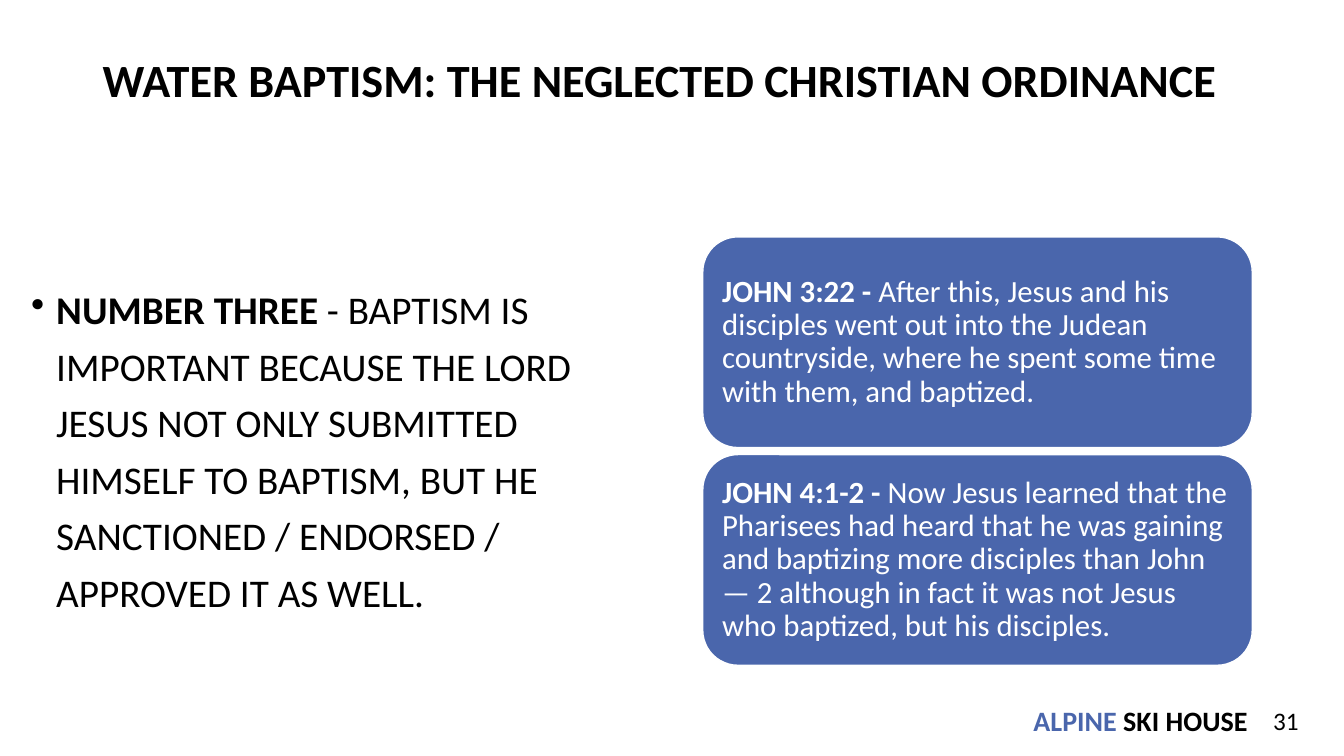
from lxml import etree
from pptx import Presentation
from pptx.dml.color import RGBColor
from pptx.enum.shapes import MSO_SHAPE
from pptx.enum.text import MSO_ANCHOR, PP_ALIGN
from pptx.oxml.ns import qn
from pptx.util import Inches, Pt

ROUNDED = MSO_SHAPE.ROUNDED_RECTANGLE
TOP, MIDDLE = MSO_ANCHOR.TOP, MSO_ANCHOR.MIDDLE
LEFT, RIGHT = PP_ALIGN.LEFT, PP_ALIGN.RIGHT

FONT = "Calibri"
BLUE = RGBColor(0x4A, 0x66, 0xAC)
BLACK = RGBColor(0, 0, 0)
WHITE = RGBColor(255, 255, 255)

TITLE = "WATER BAPTISM: THE NEGLECTED CHRISTIAN ORDINANCE"
POINT = (
    "NUMBER THREE ",
    "- BAPTISM IS IMPORTANT BECAUSE THE LORD JESUS NOT ONLY SUBMITTED HIMSELF "
    "TO BAPTISM, BUT HE SANCTIONED / ENDORSED / APPROVED IT AS WELL.",
)
VERSES = [
    ("JOHN 3:22 - ",
     "After this, Jesus and his disciples went out into the Judean countryside, "
     "where he spent some time with them, and baptized."),
    ("JOHN 4:1-2 - ",
     "Now Jesus learned that the Pharisees had heard that he was gaining and "
     "baptizing more disciples than John — 2 although in fact it was not Jesus "
     "who baptized, but his disciples."),
]
CARD_GAP = 0.07


def format_text(shape, size, color, anchor=TOP, margins=(0.1, 0.05),
                spacing=1.0, align=LEFT):
    """Set the frame and first paragraph of a shape; return the paragraph."""
    frame = shape.text_frame
    frame.word_wrap = True
    frame.vertical_anchor = anchor
    frame.margin_left = frame.margin_right = Inches(margins[0])
    frame.margin_top = frame.margin_bottom = Inches(margins[1])
    paragraph = frame.paragraphs[0]
    paragraph.alignment = align
    paragraph.line_spacing = spacing
    paragraph.font.name = FONT
    paragraph.font.size = Pt(size)
    paragraph.font.color.rgb = color
    return paragraph


def add_text_box(slide, box, size, **style):
    shape = slide.shapes.add_textbox(*map(Inches, box))
    return format_text(shape, size, BLACK, **style)


def add_lead_in(paragraph, lead, rest):
    """Write a bold opening followed by regular text."""
    for text, bold in ((lead, True), (rest, False)):
        run = paragraph.add_run()
        run.text = text
        run.font.bold = bold


def add_bullet(paragraph, indent):
    properties = paragraph._p.get_or_add_pPr()
    properties.set("marL", str(Inches(indent)))
    properties.set("indent", str(-Inches(indent)))
    bullet = etree.Element(qn("a:buChar"), char="•")
    # Bullet elements come after spacing and before default run properties
    properties.find(qn("a:defRPr")).addprevious(bullet)


def add_title(slide, box):
    paragraph = add_text_box(slide, box, 33, anchor=MIDDLE, spacing=0.9)
    paragraph.text = TITLE
    paragraph.font.bold = True


def add_point(slide, box):
    paragraph = add_text_box(slide, box, 28, spacing=1.2)
    add_bullet(paragraph, 0.25)
    add_lead_in(paragraph, *POINT)


def add_verse_cards(slide, box):
    """Stack one rounded card per verse, evenly, inside the box."""
    left, top, width, height = box
    card_height = (height - CARD_GAP * (len(VERSES) - 1)) / len(VERSES)
    for index, verse in enumerate(VERSES):
        card_top = top + index * (card_height + CARD_GAP)
        card = slide.shapes.add_shape(
            ROUNDED, *map(Inches, (left, card_top, width, card_height)))
        card.shadow.inherit = False
        card.fill.solid()
        card.fill.fore_color.rgb = BLUE
        card.line.color.rgb = WHITE
        card.line.width = Pt(1)
        paragraph = format_text(card, 22, WHITE, anchor=MIDDLE,
                                margins=(0.09, 0.09), spacing=0.9)
        add_lead_in(paragraph, *verse)


def add_footer(slide, box):
    """Place the organisation name, then the page number at the right end."""
    left, top, width, height = box
    number_width = 0.56
    name_width = width - number_width
    name_shape = slide.shapes.add_textbox(
        *map(Inches, (left, top, name_width, height)))
    name = format_text(name_shape, 20, BLACK, anchor=MIDDLE, margins=(0.02, 0.02))
    name_shape.text_frame.word_wrap = False
    name.font.bold = True
    for text, color in (("ALPINE", BLUE), (" SKI HOUSE", BLACK)):
        run = name.add_run()
        run.text = text
        run.font.color.rgb = color
    number = add_text_box(
        slide, (left + name_width, top, number_width, height), 18, align=RIGHT)
    number.text = "31"


def main():
    presentation = Presentation()
    presentation.slide_width = Inches(13.33)
    presentation.slide_height = Inches(7.5)
    slide = presentation.slides.add_slide(presentation.slide_layouts[6])
    add_title(slide, (0.92, 0.47, 11.5, 0.7))
    add_point(slide, (0.21, 2.69, 6.16, 4.26))
    add_verse_cards(slide, (6.97, 2.35, 5.45, 4.25))
    add_footer(slide, (10.23, 6.95, 2.75, 0.4))
    presentation.save("out.pptx")


if __name__ == "__main__":
    main()
